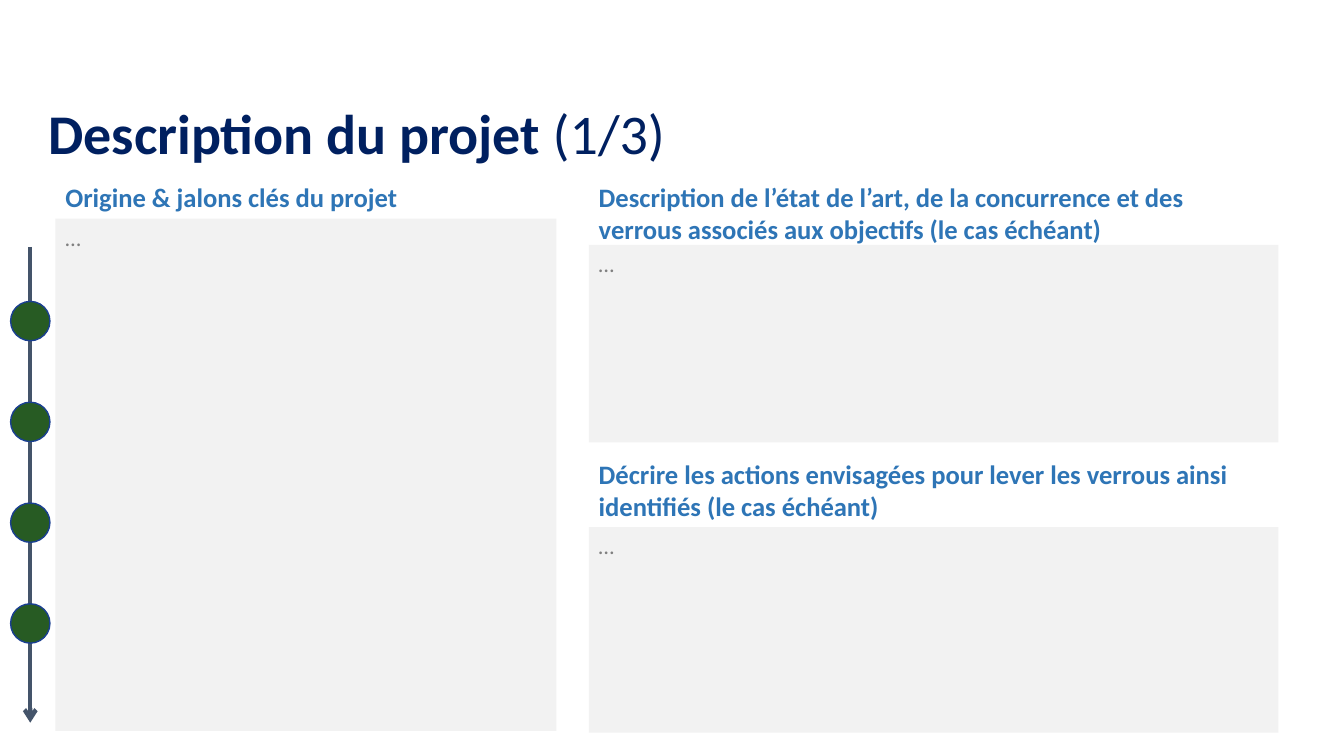
from lxml.etree import SubElement
from pptx import Presentation
from pptx.dml.color import RGBColor
from pptx.enum.shapes import MSO_CONNECTOR, MSO_SHAPE
from pptx.enum.text import MSO_ANCHOR, MSO_AUTO_SIZE, PP_ALIGN
from pptx.oxml.ns import qn
from pptx.util import Inches, Pt

NAVY = RGBColor(0x00, 0x20, 0x60)
BLUE = RGBColor(0x2E, 0x75, 0xB6)
GREY = RGBColor(0x80, 0x80, 0x80)
PANEL = RGBColor(0xF2, 0xF2, 0xF2)
SLATE = RGBColor(0x44, 0x54, 0x6A)
GREEN = RGBColor(0x27, 0x5B, 0x23)
OUTLINE = RGBColor(0x1A, 0x3F, 0x91)

# Heading, left, width, heading top, heading height, panel top, panel height
SECTIONS = [
    ("Origine & jalons clés du projet", 0.55, 4.97, 1.75, 0.42, 2.17, 5.08),
    ("Description de l’état de l’art, de la concurrence et des verrous "
     "associés aux objectifs (le cas échéant)",
     5.84, 6.84, 1.75, 0.74, 2.43, 1.96),
    ("Décrire les actions envisagées pour lever les verrous ainsi "
     "identifiés (le cas échéant)",
     5.84, 6.84, 4.49, 0.74, 5.23, 2.04),
]

TIMELINE_X = 0.3
MILESTONE_SIZE = 0.39
MILESTONE_COUNT = 4
FIRST_MILESTONE_TOP = 2.99
MILESTONE_STEP = 1


def add_span(para, text, size, color, bold=False):
    span = para.add_run()
    span.text = text
    span.font.name = "Calibri"
    span.font.size = Pt(size)
    span.font.bold = bold
    span.font.color.rgb = color


def add_title(slide):
    title = slide.shapes.title
    title.left, title.top = Inches(0.38), Inches(0.9)
    title.width, title.height = Inches(9.53), Inches(0.91)
    frame = title.text_frame
    frame.auto_size = MSO_AUTO_SIZE.NONE
    frame.vertical_anchor = MSO_ANCHOR.MIDDLE
    para = frame.paragraphs[0]
    para.alignment = PP_ALIGN.LEFT
    para.line_spacing = 0.9
    add_span(para, "Description du projet ", size=40, color=NAVY, bold=True)
    add_span(para, "(1/3)", size=40, color=NAVY)


def add_filled_shape(slide, kind, left, top, width, height, fill):
    shape = slide.shapes.add_shape(
        kind, Inches(left), Inches(top), Inches(width), Inches(height))
    shape.shadow.inherit = False
    shape.fill.solid()
    shape.fill.fore_color.rgb = fill
    return shape


def add_panel(slide, left, top, width, height):
    """Add a grey area with a placeholder ellipsis to be filled in."""
    panel = add_filled_shape(
        slide, MSO_SHAPE.RECTANGLE, left, top, width, height, PANEL)
    panel.line.fill.background()
    frame = panel.text_frame
    frame.vertical_anchor = MSO_ANCHOR.TOP
    para = frame.paragraphs[0]
    para.alignment = PP_ALIGN.JUSTIFY
    add_span(para, "…", size=16, color=GREY)


def add_heading(slide, text, left, top, width, height):
    box = slide.shapes.add_textbox(
        Inches(left), Inches(top), Inches(width), Inches(height))
    frame = box.text_frame
    frame.word_wrap = True
    frame.auto_size = MSO_AUTO_SIZE.SHAPE_TO_FIT_TEXT
    add_span(frame.paragraphs[0], text, size=19, color=BLUE, bold=True)


def add_timeline_arrow(slide):
    arrow = slide.shapes.add_connector(
        MSO_CONNECTOR.STRAIGHT,
        Inches(TIMELINE_X), Inches(2.45), Inches(TIMELINE_X), Inches(7.17))
    arrow.line.color.rgb = SLATE
    arrow.line.width = Pt(3)
    SubElement(arrow.line._get_or_add_ln(), qn("a:tailEnd"), type="arrow")
    SubElement(arrow._element.spPr, qn("a:effectLst"))


def add_milestone(slide, top):
    milestone = add_filled_shape(
        slide, MSO_SHAPE.OVAL, TIMELINE_X - MILESTONE_SIZE / 2, top,
        MILESTONE_SIZE, MILESTONE_SIZE, GREEN)
    milestone.line.color.rgb = OUTLINE
    milestone.line.width = Pt(1)


def main():
    deck = Presentation()
    deck.slide_width, deck.slide_height = Inches(13.33), Inches(7.5)
    slide = deck.slides.add_slide(deck.slide_layouts.get_by_name("Title Only"))
    add_title(slide)
    for text, left, width, top, height, panel_top, panel_height in SECTIONS:
        add_panel(slide, left, panel_top, width, panel_height)
        add_heading(slide, text, left, top, width, height)
    add_timeline_arrow(slide)
    for index in range(MILESTONE_COUNT):
        add_milestone(slide, FIRST_MILESTONE_TOP + index * MILESTONE_STEP)
    deck.save("out.pptx")


if __name__ == "__main__":
    main()
